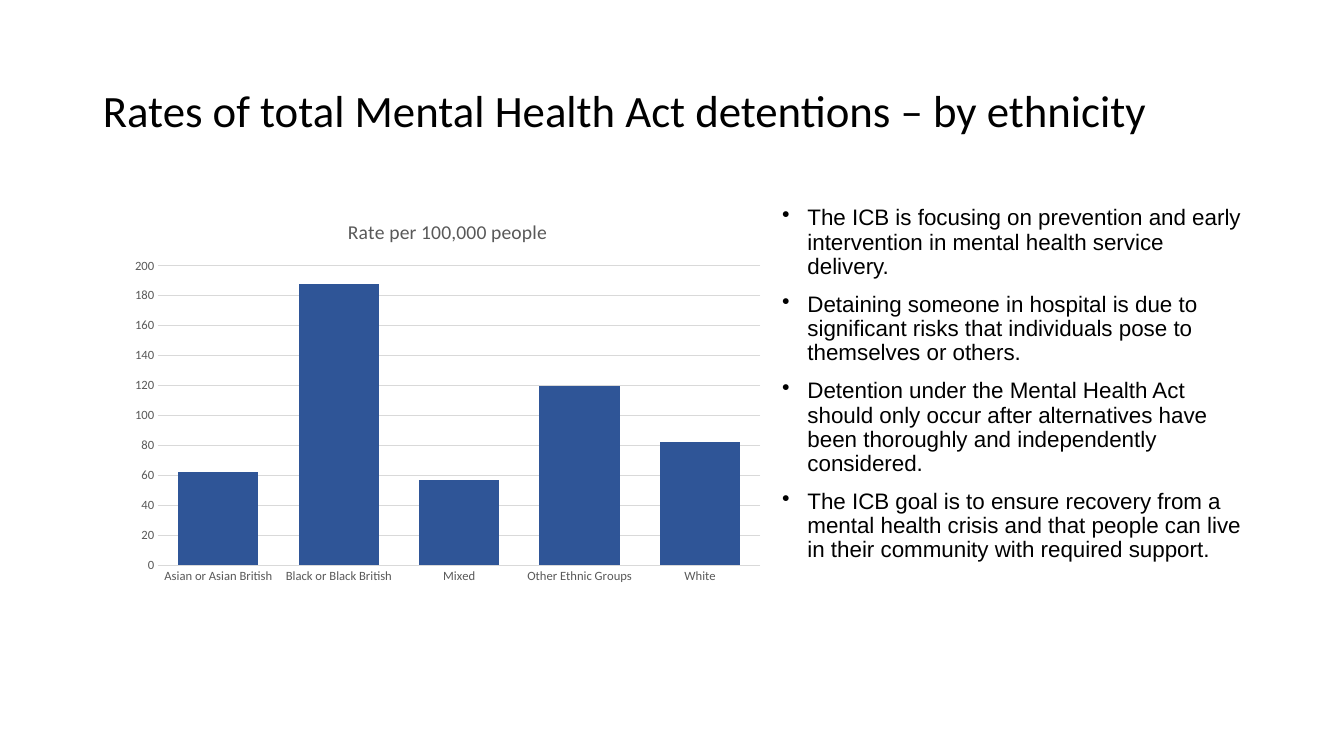
from dataclasses import dataclass

from lxml import etree
from pptx import Presentation
from pptx import util as u
from pptx.chart.data import CategoryChartData
from pptx.dml.color import RGBColor
from pptx.enum import chart as ch
from pptx.enum import text
from pptx.oxml.ns import qn

WIDTH, HEIGHT = u.Inches(13.33), u.Inches(7.5)
TITLE = "Rates of total Mental Health Act detentions – by ethnicity"
CHART_TITLE = "Rate per 100,000 people"
RATES = {
    "Asian or Asian British": 62,
    "Black or Black British": 188,
    "Mixed": 57,
    "Other Ethnic Groups": 120,
    "White": 82,
}
POINTS = [
    "The ICB is focusing on prevention and early intervention in mental health service delivery.",
    "Detaining someone in hospital is due to significant risks that individuals pose to "
    "themselves or others.",
    "Detention under the Mental Health Act should only occur after alternatives have been "
    "thoroughly and independently considered.",
    "The ICB goal is to ensure recovery from a mental health crisis and that people can live "
    "in their community with required support.",
]


@dataclass(frozen=True)
class Theme:
    """Colours, fonts and type sizes of the slide."""

    ink: str = "000000"
    muted: str = "595959"
    grid: str = "D9D9D9"
    bar: str = "2F5597"
    heading_font: str = "Calibri"
    body_font: str = "Arial"
    title_size: int = 32
    body_size: int = 16
    chart_title_size: int = 14
    axis_size: int = 9


THEME = Theme()


def area(left, top, width, height):
    """Turn inches on the slide into a left, top, width, height tuple."""
    return tuple(u.Inches(length) for length in (left, top, width, height))


def style_font(font, name, size, color):
    """Set the face, size and colour of a regular font."""
    font.name, font.size, font.bold = name, u.Pt(size), False
    font.color.rgb = RGBColor.from_string(color)


def style_line(line, color):
    """Give a line the hairline weight and a colour."""
    line.color.rgb = RGBColor.from_string(color)
    line.width = u.Pt(0.75)


def set_title(page, place):
    """Place and format the title placeholder."""
    title = page.shapes.title
    title.left, title.top, title.width, title.height = place
    frame = title.text_frame
    frame.text = TITLE
    frame.vertical_anchor = text.MSO_ANCHOR.MIDDLE
    para = frame.paragraphs[0]
    para.alignment = text.PP_ALIGN.LEFT
    para.line_spacing = 0.9
    style_font(para.font, THEME.heading_font, THEME.title_size, THEME.ink)


def add_bullets(page, place, points):
    """Add a text box with one bulleted paragraph per point."""
    frame = page.shapes.add_textbox(*place).text_frame
    frame.word_wrap = True
    for index, point in enumerate(points):
        para = frame.add_paragraph() if index else frame.paragraphs[0]
        para.text = point
        para.line_spacing = 0.9
        para.space_before = u.Pt(10)
        style_font(para.font, THEME.body_font, THEME.body_size, THEME.ink)
        props = para._p.get_or_add_pPr()
        props.set("marL", str(u.Inches(0.25)))
        props.set("indent", str(-u.Inches(0.25)))
        bullet = etree.Element(qn("a:buChar"), char="•")
        props.find(qn("a:defRPr")).addprevious(bullet)


def style_axis(axis):
    """Remove tick marks and format the labels of an axis."""
    axis.major_tick_mark = axis.minor_tick_mark = ch.XL_TICK_MARK.NONE
    style_font(axis.tick_labels.font, THEME.heading_font, THEME.axis_size, THEME.muted)


def add_rate_chart(page, place, rates):
    """Add the column chart of detention rates."""
    data = CategoryChartData()
    data.categories = list(rates)
    data.add_series("Series 1", list(rates.values()))
    chart = page.shapes.add_chart(ch.XL_CHART_TYPE.COLUMN_CLUSTERED, *place, data).chart
    style_font(chart.font, THEME.heading_font, 10, THEME.ink)
    chart.has_legend = False
    chart.has_title = True
    heading = chart.chart_title.text_frame
    heading.text = CHART_TITLE
    style_font(heading.paragraphs[0].font, THEME.heading_font,
               THEME.chart_title_size, THEME.muted)
    chart.chart_title.include_in_layout = False

    plot = chart.plots[0]
    plot.gap_width, plot.overlap, plot.vary_by_categories = 50, -27, False
    fill = plot.series[0].format.fill
    fill.solid()
    fill.fore_color.rgb = RGBColor.from_string(THEME.bar)

    style_axis(chart.category_axis)
    style_line(chart.category_axis.format.line, THEME.grid)
    values = chart.value_axis
    style_axis(values)
    values.minimum_scale, values.maximum_scale, values.major_unit = 0, 200, 20
    values.format.line.fill.background()
    style_line(values.major_gridlines.format.line, THEME.grid)


def main():
    """Build the slide and save the deck."""
    deck = Presentation()
    deck.slide_width, deck.slide_height = WIDTH, HEIGHT
    page = deck.slides.add_slide(deck.slide_layouts[5])
    set_title(page, area(0.92, 0.4, 11.77, 1.45))
    add_rate_chart(page, area(1.21, 2, 6.46, 3.87), RATES)
    add_bullets(page, area(7.66, 2, 4.75, 4.76), POINTS)
    deck.save("out.pptx")


if __name__ == "__main__":
    main()
